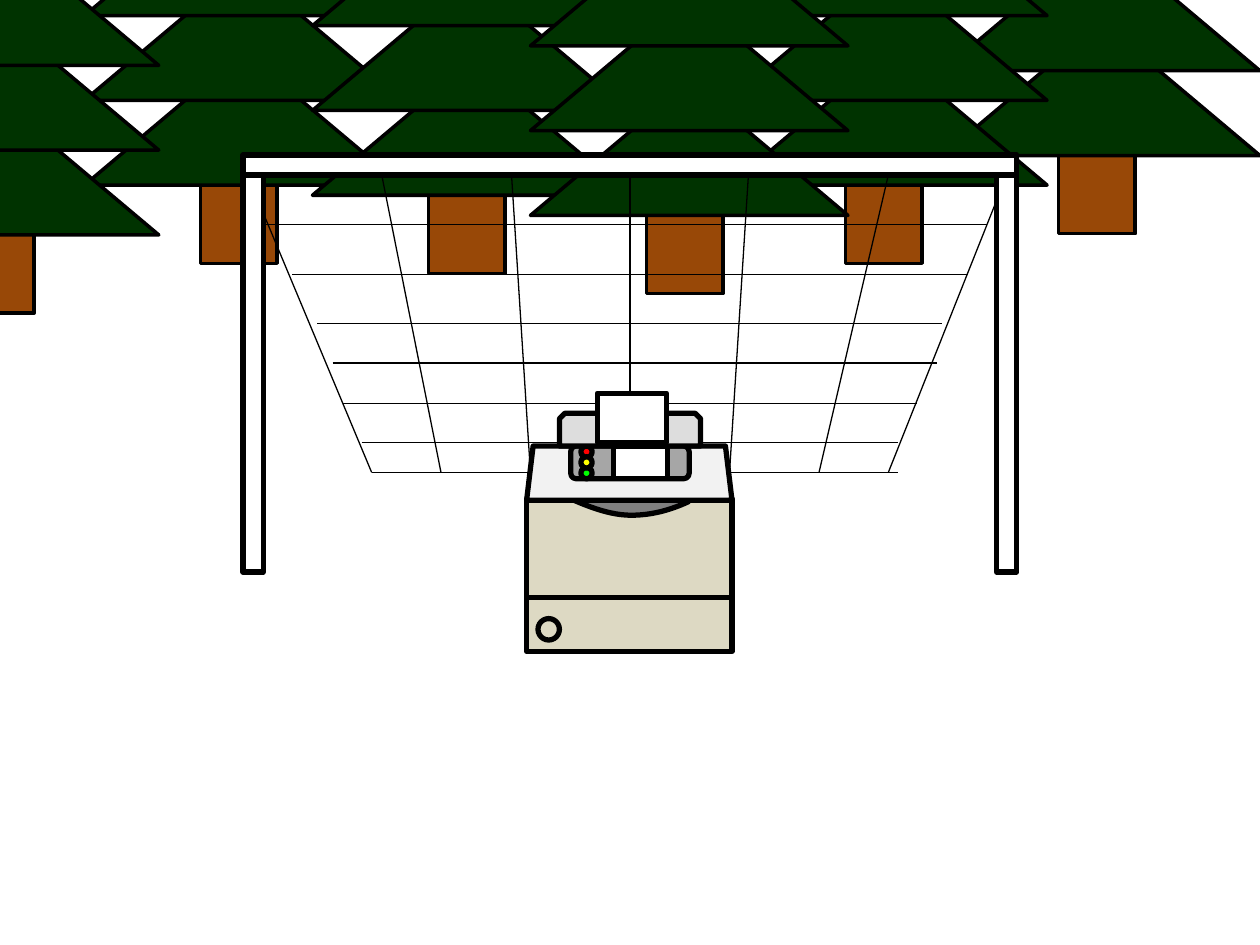
from dataclasses import dataclass
from pptx import Presentation
from pptx.dml.color import RGBColor as RGB
from pptx.enum.shapes import MSO_CONNECTOR as Link, MSO_SHAPE as Kind
from pptx.oxml.ns import qn
from pptx.util import Inches, Pt
from lxml.etree import SubElement

# The slide is a grid of 1000 columns by 750 rows
COLS, ROWS = 1000, 750
CELL = Inches(0.01)


@dataclass(frozen=True)
class Theme:
    ink: str = "000000"
    white: str = "FFFFFF"
    leaf: str = "003300"
    bark: str = "984807"
    body: str = "DDD9C3"
    lid: str = "F2F2F2"
    tray: str = "DDDDDD"
    slot: str = "A6A6A6"
    dent: str = "808080"
    red: str = "FF0000"
    green: str = "00FF00"
    yellow: str = "FFFF00"
    thin: float = 0.75
    mid: float = 2
    thick: float = 3


@dataclass(frozen=True)
class Box:
    x: float
    y: float
    w: float
    h: float

    def sub(self, x, y, w, h):
        return Box(self.x + x, self.y + y, w, h)


T = Theme()


def paint(shape, fill, width):
    shape.shadow.inherit = False
    if fill:
        shape.fill.solid()
        shape.fill.fore_color.rgb = RGB.from_string(fill)
    else:
        shape.fill.background()
    shape.line.color.rgb = RGB.from_string(T.ink)
    shape.line.width = Pt(width)


def block(shapes, kind, box, fill, width=T.thick):
    shape = shapes.add_shape(
        kind, *(round(v * CELL) for v in (box.x, box.y, box.w, box.h)))
    paint(shape, fill, width)
    return shape


def rule(shapes, box, x1, y1, x2, y2):
    ends = (box.x + x1, box.y + y1, box.x + x2, box.y + y2)
    line = shapes.add_connector(Link.STRAIGHT, *(round(v * CELL) for v in ends))
    line.line.color.rgb = RGB.from_string(T.ink)
    line.line.width = Pt(T.thin)
    SubElement(line._element.spPr, qn("a:effectLst"))


def tree(shapes, box, tiers):
    """Trunk first, then tiers of leaves from the lowest up."""
    block(shapes, Kind.RECTANGLE, box.sub(92, 90, 61, 78), T.bark, T.mid)
    for tier in range(tiers):
        part = box.sub(0, -67.3 * tier, box.w, 106)
        block(shapes, Kind.ISOSCELES_TRIANGLE, part, T.leaf, T.mid)


def forest(slide):
    group = slide.shapes.add_group_shape().shapes
    for x, y, tiers in ((67, 41, 3), (248, 49, 3), (748, 17.5, 2),
                        (579, 41, 3), (421, 65, 3), (-126, 80.5, 3)):
        tree(group, Box(x, y, 252, 168), tiers)


def net(slide, box):
    group = slide.shapes.add_group_shape().shapes
    base = 252
    # Strands running down: foot x, head x, head y
    for foot, head, top in ((102, 0, 8), (512, 606, 16), (157, 110, 16),
                            (228, 213, 16), (307, 307, 16),
                            (386, 401, 16), (457, 512, 16)):
        rule(group, box, foot, base, head, top)
    # Strands running across: y, left, right
    for y, left, right in ((base, 102, 520), (197, 79, 535), (134, 59, 555),
                           (95, 39, 575), (55, 16, 590), (228, 94, 520),
                           (165, 71, 551)):
        rule(group, box, left, y, right, y)


def goal(slide, box):
    net(slide, box)
    bar = 16
    for x in (0, box.w - bar):
        block(slide.shapes, Kind.RECTANGLE,
              box.sub(x, bar, bar, box.h - bar), T.white)
    block(slide.shapes, Kind.RECTANGLE, box.sub(0, 0, box.w, bar), T.white)


def curve(a, b, c, d, steps=12):
    """Points along a cubic curve, without its start."""
    for t in (n / steps for n in range(1, steps + 1)):
        s = 1 - t
        yield tuple(s**3 * p + 3 * s * s * t * q + 3 * s * t * t * u + t**3 * v
                    for p, q, u, v in zip(a, b, c, d))


def dent(shapes, box):
    start, low, end = (0, 0), (48, 13), (94, 2)
    dots = [*curve(start, (16, 7), (32, 13), low),
            *curve(low, (64, 13), (79, 9), end)]
    pen = shapes.build_freeform(round(box.x * CELL), round(box.y * CELL))
    pen.add_line_segments([(round((box.x + x) * CELL), round((box.y + y) * CELL))
                           for x, y in dots], close=False)
    paint(pen.convert_to_shape(), T.dent, T.thick)


def printer(slide, box):
    group = slide.shapes.add_group_shape().shapes
    # Case
    block(group, Kind.RECTANGLE, box.sub(0, 84, box.w, 78), T.body)
    dent(group, box.sub(35, 84, 94, 13))
    block(group, Kind.RECTANGLE, box.sub(0, 162, box.w, 43), T.body)
    lid = block(group, Kind.TRAPEZOID, box.sub(0, 42, box.w, 43), T.lid)
    lid.adjustments[0] = 0.12
    # Panel and its lamps
    block(group, Kind.ROUNDED_RECTANGLE, box.sub(35, 42, 94, 26), T.slot)
    for row, tone in ((0, T.red), (2, T.green), (1, T.yellow)):
        block(group, Kind.OVAL, box.sub(43, 42 + 8.5 * row, 9, 9), tone)
    # Sheet, tray and knob
    block(group, Kind.RECTANGLE, box.sub(69, 42, 43, 26), T.white)
    block(group, Kind.SNIP_2_SAME_RECTANGLE, box.sub(26, 16, 112, 26), T.tray)
    block(group, Kind.OVAL, box.sub(9, 179, 17, 17), None)
    # Paper in the tray
    block(slide.shapes, Kind.RECTANGLE, box.sub(56, 0, 55, 39), T.white)


def main():
    deck = Presentation()
    deck.slide_width, deck.slide_height = COLS * CELL, ROWS * CELL
    slide = deck.slides.add_slide(deck.slide_layouts[6])
    forest(slide)
    goal(slide, Box(193, 123, 614, 331))
    printer(slide, Box(418, 312, 163, 205))
    deck.save("out.pptx")


if __name__ == "__main__":
    main()
